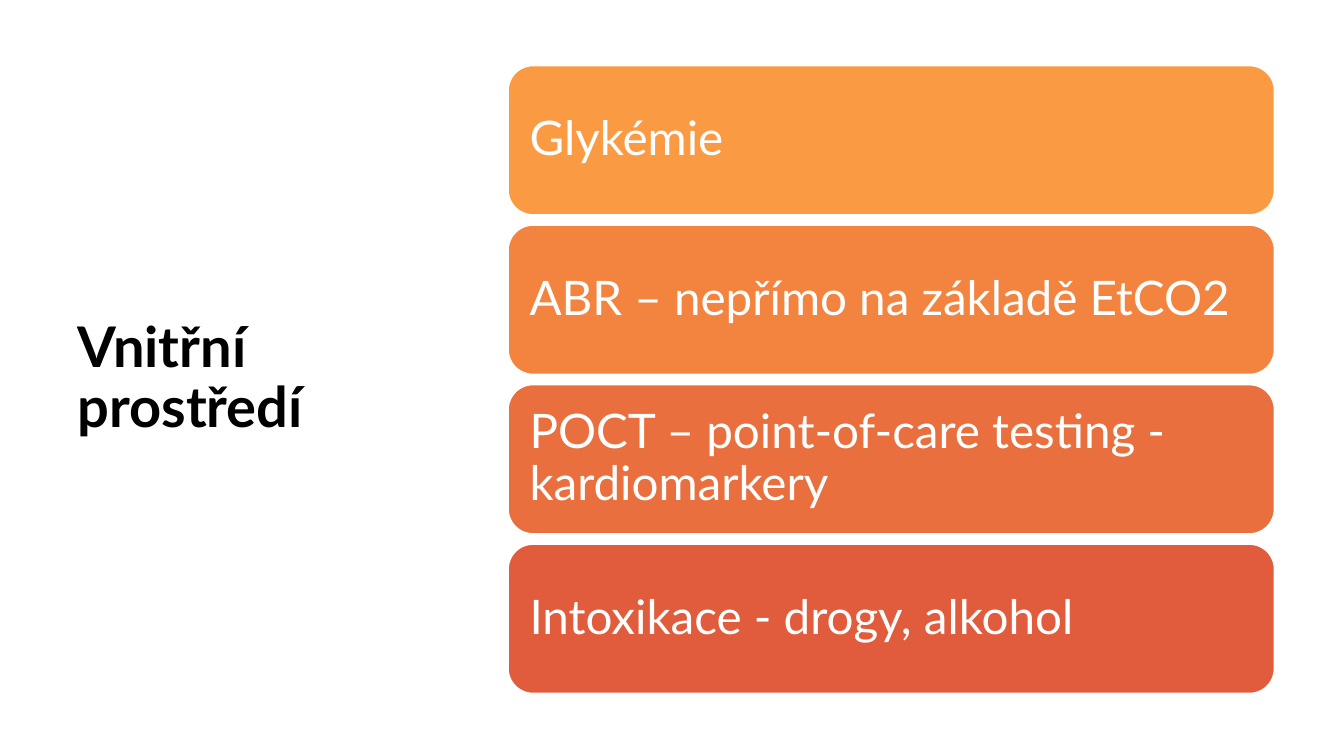
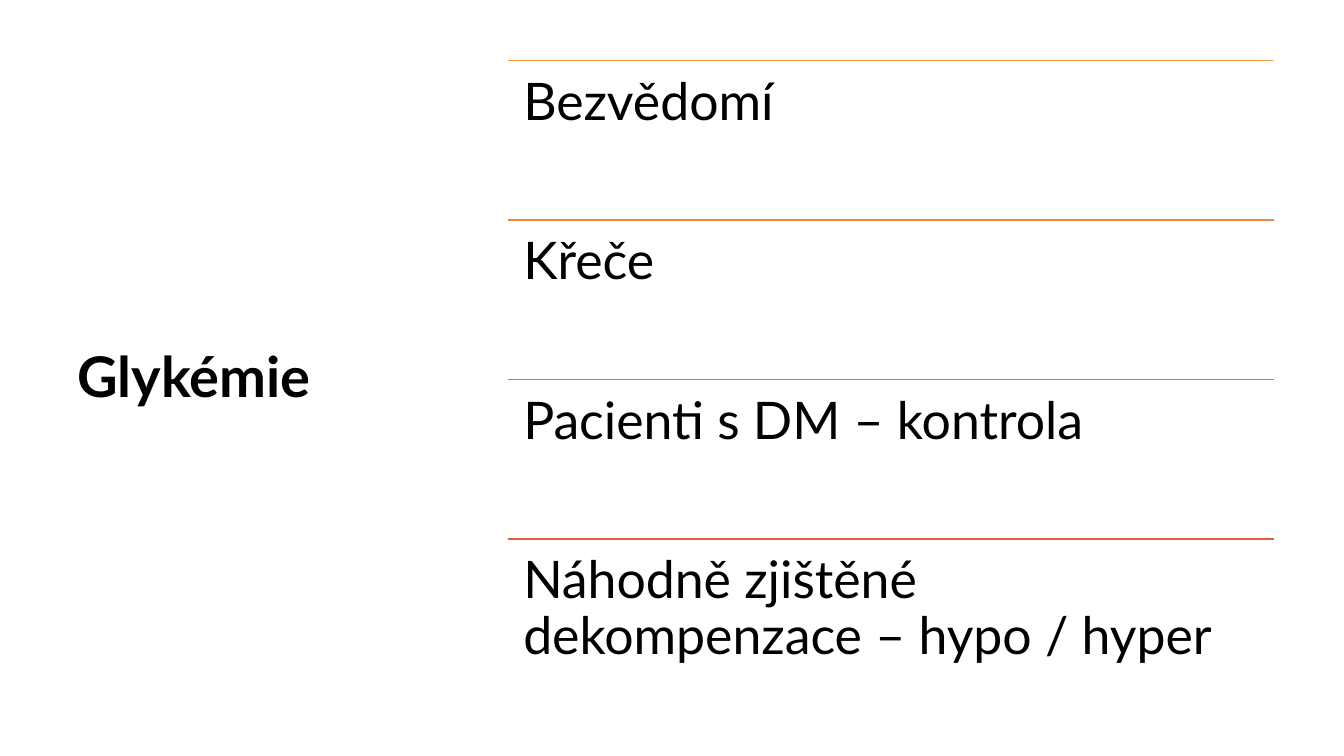
import pptx
import pptx.dml.color
import pptx.enum.shapes
import pptx.enum.text
import pptx.oxml
import pptx.oxml.ns
import pptx.util

Inches = pptx.util.Inches
Pt = pptx.util.Pt
RGBColor = pptx.dml.color.RGBColor
Anchor = pptx.enum.text.MSO_ANCHOR

BLACK = RGBColor(0x00, 0x00, 0x00)
WHITE = RGBColor(0xFF, 0xFF, 0xFF)
ACCENTS = (
    RGBColor(0xFA, 0x9A, 0x42),
    RGBColor(0xF2, 0x84, 0x40),
    RGBColor(0xEA, 0x6F, 0x3E),
    RGBColor(0xE1, 0x5C, 0x3D),
)
FONT = "Lato"

TOP, HEIGHT = 0.6, 6.33
TITLE_LEFT, TITLE_WIDTH = 0.67, 3.82
LIST_LEFT, LIST_WIDTH = 5.04, 7.6
ROW_HEIGHT = HEIGHT / len(ACCENTS)
CARD_HEIGHT = 1.48
CARD_OFFSET = (ROW_HEIGHT - CARD_HEIGHT) / 2


def write(sp, text, size, color=BLACK, bold=False, anchor=Anchor.TOP,
          inset_x=0.1, inset_y=0.05):
    tf = sp.text_frame
    tf.word_wrap = True
    tf.vertical_anchor = anchor
    tf.margin_left = tf.margin_right = Inches(inset_x)
    tf.margin_top = tf.margin_bottom = Inches(inset_y)
    p = tf.paragraphs[0]
    p.alignment = pptx.enum.text.PP_ALIGN.LEFT
    p.line_spacing = 0.9
    r = p.add_run()
    r.text = text
    r.font.name = FONT
    r.font.size = Pt(size)
    r.font.bold = bold
    r.font.color.rgb = color


class Deck:
    def __init__(self):
        self.prs = pptx.Presentation()
        self.prs.slide_width = Inches(13.33)
        self.prs.slide_height = Inches(7.5)
        self.s = None

    def slide(self, title):
        self.s = self.prs.slides.add_slide(self.prs.slide_layouts[6])
        fill = self.s.background.fill
        fill.solid()
        fill.fore_color.rgb = WHITE
        sp = self.textbox(TITLE_LEFT, TOP, TITLE_WIDTH, HEIGHT)
        write(sp, title, 40, bold=True, anchor=Anchor.MIDDLE)

    def textbox(self, left, top, width, height):
        return self.s.shapes.add_textbox(
            Inches(left), Inches(top), Inches(width), Inches(height))

    def card(self, text, top, color):
        sp = self.s.shapes.add_shape(
            pptx.enum.shapes.MSO_SHAPE.ROUNDED_RECTANGLE,
            Inches(LIST_LEFT), Inches(top + CARD_OFFSET),
            Inches(LIST_WIDTH), Inches(CARD_HEIGHT))
        sp.shadow.inherit = False
        sp.fill.solid()
        sp.fill.fore_color.rgb = color
        sp.line.color.rgb = WHITE
        sp.line.width = Pt(1)
        write(sp, text, 34, color=WHITE, anchor=Anchor.MIDDLE,
              inset_x=0.14, inset_y=0.14)

    def rule(self, top, color):
        line = self.s.shapes.add_connector(
            pptx.enum.shapes.MSO_CONNECTOR.STRAIGHT,
            Inches(LIST_LEFT), Inches(top),
            Inches(LIST_LEFT + LIST_WIDTH), Inches(top))
        line.line.color.rgb = color
        line.line.width = Pt(1)
        line._element.spPr.append(
            pptx.oxml.parse_xml(
                f'<a:effectLst {pptx.oxml.ns.nsdecls("a")}/>'))

    def ruled_item(self, text, top, color):
        self.rule(top, color)
        sp = self.textbox(LIST_LEFT, top, LIST_WIDTH, ROW_HEIGHT)
        write(sp, text, 37, inset_x=0.15, inset_y=0.15)

    def rows(self, draw_row, texts):
        for i, (text, color) in enumerate(zip(texts, ACCENTS)):
            draw_row(text, TOP + i * ROW_HEIGHT, color)


def main():
    deck = Deck()

    deck.slide("Vnitřní prostředí")
    deck.rows(deck.card, (
        "Glykémie",
        "ABR – nepřímo na základě EtCO2",
        "POCT – point-of-care testing - kardiomarkery",
        "Intoxikace - drogy, alkohol",
    ))

    deck.slide("Glykémie")
    deck.rows(deck.ruled_item, (
        "Bezvědomí",
        "Křeče",
        "Pacienti s DM – kontrola",
        "Náhodně zjištěné dekompenzace – hypo / hyper",
    ))

    deck.prs.save("out.pptx")


if __name__ == "__main__":
    main()
